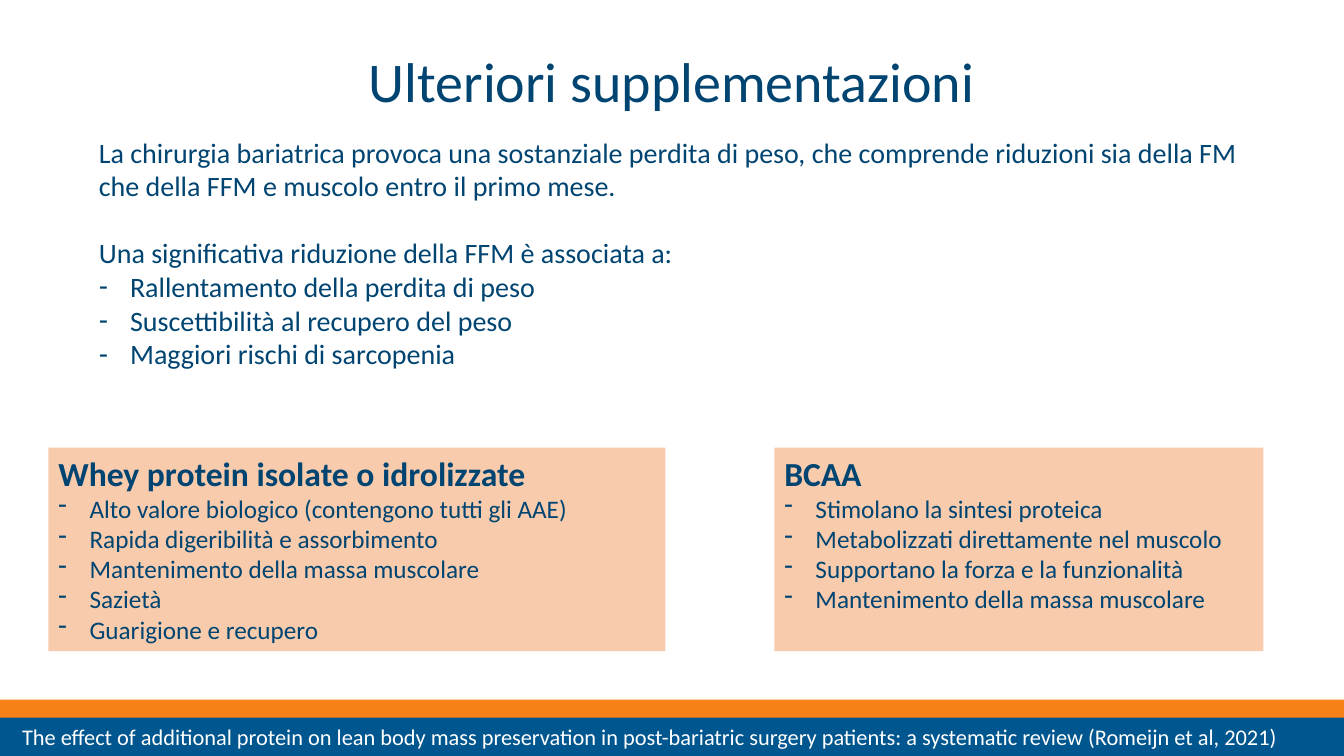
from lxml.etree import SubElement
from pptx import Presentation
from pptx.dml.color import RGBColor
from pptx.enum.shapes import MSO_SHAPE
from pptx.enum.text import MSO_ANCHOR, MSO_AUTO_SIZE, PP_ALIGN
from pptx.oxml.ns import qn
from pptx.util import Inches, Pt

NAVY = RGBColor(0x00, 0x44, 0x71)
BLUE = RGBColor(0x00, 0x56, 0x8E)
ORANGE = RGBColor(0xF8, 0x81, 0x17)
PEACH = RGBColor(0xF8, 0xCB, 0xAD)
WHITE = RGBColor(0xFF, 0xFF, 0xFF)
FONT = "Calibri"
WIDTH, HEIGHT = 13.33, 7.5
INDENT = Inches(0.31)
PANEL_TOP, PANEL_HEIGHT = 4.44, 2.02

TITLE = "Ulteriori supplementazioni"
LOSS = ("La chirurgia bariatrica provoca una sostanziale perdita di peso, che comprende "
        "riduzioni sia della FM che della FFM e muscolo entro il primo mese.")
RISKS_LEAD = "Una significativa riduzione della FFM è associata a:"
RISKS = ["Rallentamento della perdita di peso", "Suscettibilità al recupero del peso",
         "Maggiori rischi di sarcopenia"]
PANELS = [
    (0.48, 6.12, "Whey protein isolate o idrolizzate",
     ["Alto valore biologico (contengono tutti gli AAE)", "Rapida digeribilità e assorbimento",
      "Mantenimento della massa muscolare", "Sazietà", "Guarigione e recupero"]),
    (7.68, 4.85, "BCAA",
     ["Stimolano la sintesi proteica", "Metabolizzati direttamente nel muscolo",
      "Supportano la forza e la funzionalità", "Mantenimento della massa muscolare"]),
]
SOURCE = ("The effect of additional protein on lean body mass preservation in post-bariatric "
          "surgery patients: a systematic review (Romeijn et al, 2021)")


def place(shape, left, top, width, height):
    """Move a shape to a box given in inches."""
    shape.left, shape.top = Inches(left), Inches(top)
    shape.width, shape.height = Inches(width), Inches(height)


def prepare_frame(text_frame, anchor=MSO_ANCHOR.TOP):
    """Wrap the text at a fixed size and anchor it."""
    text_frame.word_wrap = True
    text_frame.auto_size = MSO_AUTO_SIZE.NONE
    text_frame.vertical_anchor = anchor


def format_paragraph(paragraph, size, color=NAVY, bold=False, dash=False,
                     align=PP_ALIGN.LEFT, before=0):
    """Set the font, spacing and optional dash of a paragraph."""
    paragraph.alignment = align
    paragraph.space_before = Pt(before)
    for run in paragraph.runs:
        run.font.name, run.font.size, run.font.bold = FONT, Pt(size), bold
        run.font.color.rgb = color
    properties = paragraph._p.get_or_add_pPr()
    indent = INDENT if dash else 0
    properties.set("marL", str(indent))
    properties.set("indent", str(-indent))
    if dash:
        SubElement(properties, qn("a:buFontTx"))
        SubElement(properties, qn("a:buChar")).set("char", "-")
    else:
        SubElement(properties, qn("a:buNone"))


def add_rectangle(slide, color, left, top, width, height):
    """Add a plain filled rectangle."""
    shape = slide.shapes.add_shape(MSO_SHAPE.RECTANGLE, Inches(left), Inches(top),
                                   Inches(width), Inches(height))
    shape.shadow.inherit = False
    shape.fill.solid()
    shape.fill.fore_color.rgb = color
    shape.line.fill.background()
    return shape


def fill_title(slide, left, top, width, height):
    """Fill the centred slide title."""
    title = slide.shapes.title
    place(title, left, top, width, height)
    title.text_frame.text = TITLE
    prepare_frame(title.text_frame, MSO_ANCHOR.MIDDLE)
    format_paragraph(title.text_frame.paragraphs[0], 40, align=PP_ALIGN.CENTER)


def fill_body(slide, left, top, width, height):
    """Fill the introduction and the list of risks."""
    body = slide.placeholders[1]
    place(body, left, top, width, height)
    body.text_frame.text = "\n".join([LOSS, RISKS_LEAD, *RISKS])
    prepare_frame(body.text_frame)
    for paragraph in body.text_frame.paragraphs:
        format_paragraph(paragraph, 20, dash=paragraph.text in RISKS,
                         before=24 if paragraph.text == RISKS_LEAD else 0)


def add_panel(slide, heading, points, left, top, width, height):
    """Add a coloured panel with a bold heading and dashed points."""
    text_frame = add_rectangle(slide, PEACH, left, top, width, height).text_frame
    text_frame.text = "\n".join([heading, *points])
    prepare_frame(text_frame)
    first, *others = text_frame.paragraphs
    format_paragraph(first, 24, bold=True)
    for paragraph in others:
        format_paragraph(paragraph, 18, dash=True)


def add_footer(slide, top, stripe_height):
    """Add the two-colour footer band with the source."""
    band_top = top + stripe_height
    band_height = HEIGHT - band_top
    add_rectangle(slide, BLUE, 0, band_top, WIDTH, band_height)
    add_rectangle(slide, ORANGE, 0, top, WIDTH, stripe_height + 0.01)
    box = slide.shapes.add_textbox(Inches(0.12), Inches(7.13), Inches(WIDTH - 0.24), Inches(0.37))
    box.text_frame.text = SOURCE
    prepare_frame(box.text_frame)
    format_paragraph(box.text_frame.paragraphs[0], 16, WHITE)


def main():
    """Build and save the presentation."""
    presentation = Presentation()
    presentation.slide_width, presentation.slide_height = Inches(WIDTH), Inches(HEIGHT)
    slide = presentation.slides.add_slide(presentation.slide_layouts[1])
    fill_title(slide, 3.53, 0.41, 6.26, 0.77)
    fill_body(slide, 0.88, 1.29, 11.64, 2.46)
    for left, width, heading, points in PANELS:
        add_panel(slide, heading, points, left, PANEL_TOP, width, PANEL_HEIGHT)
    add_footer(slide, 6.94, 0.17)
    presentation.save("out.pptx")


if __name__ == "__main__":
    main()
